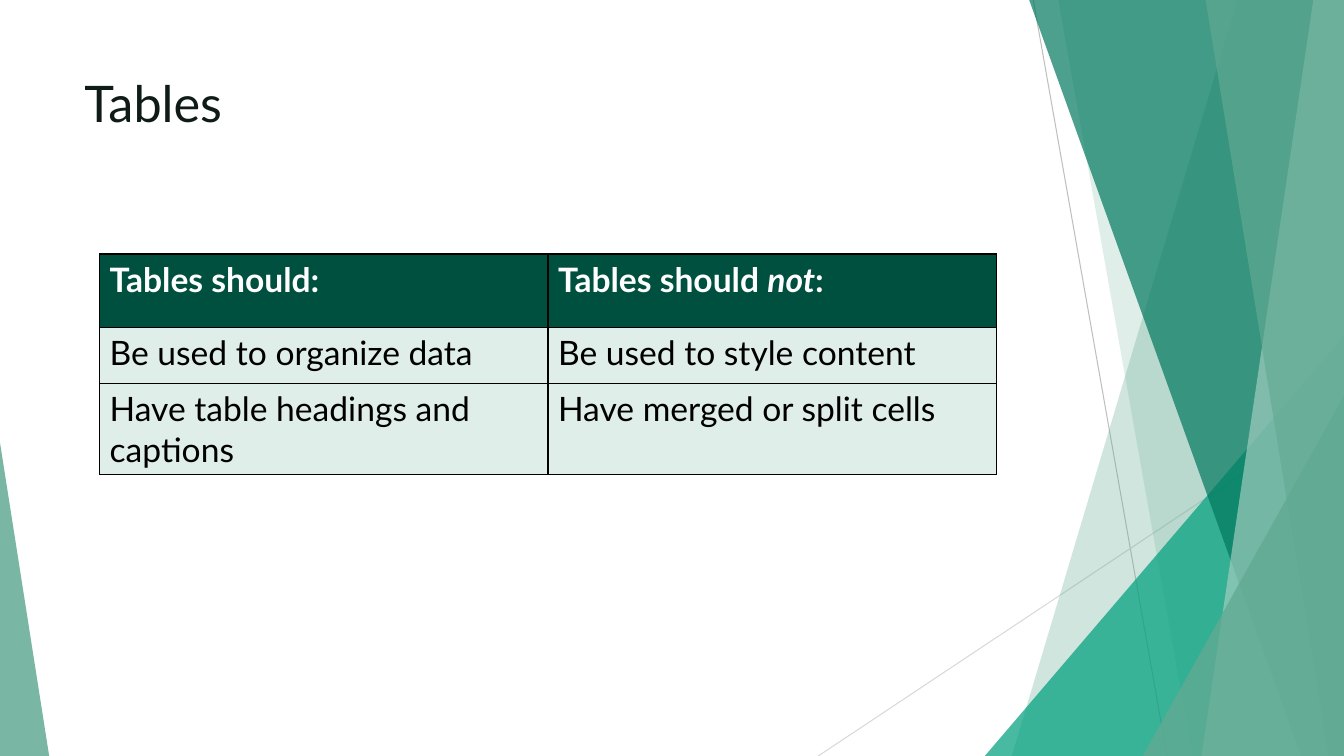
from lxml import etree
from pptx import Presentation, util as u
from pptx.dml.color import RGBColor
from pptx.enum import shapes, text
from pptx.oxml import ns

W, H, TOP = 33.87, 19.05, -0.02  # cm


def rgb(value):
    return RGBColor.from_string(value)


class Deck:
    font = "Lato"
    ink, dark, pale, white, black = "0F1B17", "00503F", "E0EEE9", "FFFFFF", "000000"

    def __init__(self):
        self.prs = Presentation()
        self.prs.slide_width, self.prs.slide_height = u.Cm(W), u.Cm(H)
        self.s = self.prs.slides.add_slide(self.prs.slide_layouts[6])

    def line(self, x1, y1, x2, y2, color):
        sp = self.s.shapes.add_connector(
            shapes.MSO_CONNECTOR.STRAIGHT, *map(u.Cm, (x1, y1, x2, y2)))
        sp.line.color.rgb, sp.line.width = rgb(color), u.Pt(0.75)
        etree.SubElement(sp._element.spPr, ns.qn("a:effectLst"))

    def paint(self, sp, color, opacity):
        sp.shadow.inherit = False
        sp.line.fill.background()
        sp.fill.solid()
        sp.fill.fore_color.rgb = rgb(color)
        clr = sp._element.spPr.find(".//" + ns.qn("a:srgbClr"))
        etree.SubElement(clr, ns.qn("a:alpha"), val=str(opacity * 1000))

    def band(self, top_x, bottom_x, color, opacity):
        """Panel with a slanted left side that reaches the right slide edge."""
        pts = [(u.Cm(x), u.Cm(y)) for x, y in
               ((top_x, TOP), (W, TOP), (W, H), (bottom_x, H))]
        fb = self.s.shapes.build_freeform(*pts[0])
        fb.add_line_segments(pts[1:], close=True)
        self.paint(fb.convert_to_shape(), color, opacity)

    def triangle(self, x, y, w, apex, color, opacity):
        """Triangle that stands on the bottom slide edge."""
        sp = self.s.shapes.add_shape(
            shapes.MSO_SHAPE.ISOSCELES_TRIANGLE, *map(u.Cm, (x, y, w, H - y)))
        sp.adjustments[0] = apex
        self.paint(sp, color, opacity)

    def add_runs(self, tf, runs, color, **fmt):
        """Each run is a (text, italic) pair."""
        p = tf.paragraphs[0]
        p.alignment = text.PP_ALIGN.LEFT
        for words, italic in runs:
            r = p.add_run()
            r.text = words
            for name, value in {"name": self.font, "italic": italic, **fmt}.items():
                setattr(r.font, name, value)
            r.font.color.rgb = rgb(color)

    def title(self, words, x, y, w, h):
        tf = self.s.shapes.add_textbox(*map(u.Cm, (x, y, w, h))).text_frame
        tf.word_wrap, tf.vertical_anchor = True, text.MSO_ANCHOR.TOP
        self.add_runs(tf, [(words, False)], self.ink, size=u.Pt(36))

    def border(self, cell):
        tc_pr = cell._tc.get_or_add_tcPr()
        for i, side in enumerate(("lnL", "lnR", "lnT", "lnB")):
            ln = etree.Element(ns.qn("a:" + side), w=str(u.Pt(1)))
            fill = etree.SubElement(ln, ns.qn("a:solidFill"))
            etree.SubElement(fill, ns.qn("a:srgbClr"), val=self.black)
            tc_pr.insert(i, ln)

    def table(self, rows, x, y, col_w, heights):
        n = len(rows[0])
        tbl = self.s.shapes.add_table(
            len(rows), n, *map(u.Cm, (x, y, col_w * n, sum(heights)))).table
        for col in tbl.columns:
            col.width = u.Cm(col_w)
        for i, (row, height) in enumerate(zip(rows, heights)):
            tbl.rows[i].height = u.Cm(height)
            head = i == 0
            for j, runs in enumerate(row):
                cell = tbl.cell(i, j)
                cell.fill.solid()
                cell.fill.fore_color.rgb = rgb(self.dark if head else self.pale)
                self.border(cell)
                self.add_runs(cell.text_frame, runs, self.white if head else self.black,
                              size=u.Pt(24), bold=head)


def main():
    d = Deck()

    # Thin background lines
    d.line(26.04, 0, 29.41, H, "BFBFBF")
    d.line(W, 10.24, 20.62, H, "D9D9D9")

    # Translucent facets, back to front
    d.band(31.19, 25.5, "62AA93", 30)
    d.band(26.67, 30.05, "62AA93", 20)
    d.triangle(24.82, 8.46, 9.05, 1, "00A07D", 72)
    d.band(25.93, 32.79, "00785E", 70)
    d.band(33.1, 30.28, "A1CCBE", 70)
    d.band(30.38, 33.48, "62AA93", 65)
    d.triangle(28.8, 9.98, 5.07, 1, "62AA93", 80)
    d.triangle(0, 11.15, 1.24, 0, "62AA93", 85)

    # Title and table
    d.title("Tables", 1.88, 1.7, 23.88, 3.66)
    d.table([
        [[("Tables should:", False)],
         [("Tables should ", False), ("not", True), (":", False)]],
        [[("Be used to organize data", False)],
         [("Be used to style content", False)]],
        [[("Have table headings and captions", False)],
         [("Have merged or split cells", False)]],
    ], 2.51, 6.4, 11.3, (1.85, 1.42, 2.29))

    d.prs.save("out.pptx")


if __name__ == "__main__":
    main()
